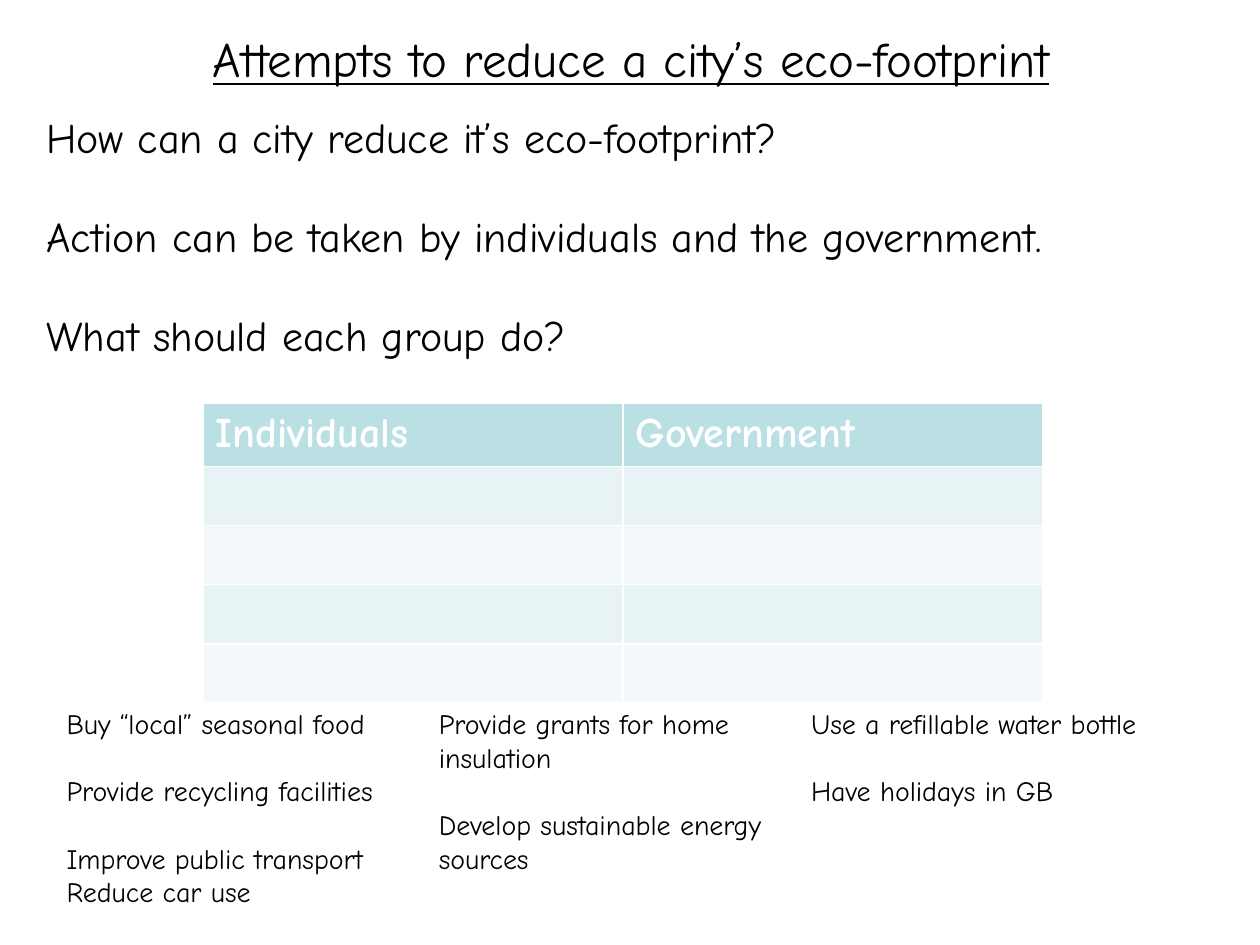
"""Build the eco-footprint lesson slide with its sorting table and word bank."""
import pptx
import pptx.util
import pptx.dml.color
import pptx.enum.text

FONT = "Comic Neue"
BLACK, WHITE = "000000", "FFFFFF"
TITLE = "Attempts to reduce a city’s eco-footprint"
PROMPTS = [
    "How can a city reduce it’s eco-footprint?",
    "Action can be taken by individuals and the government.",
    "What should each group do?",
]
HEADINGS = ["Individuals", "Government"]
ROW_FILLS = ["BBE0E3", "E7F3F4", "F3F9FA", "E7F3F4", "F3F9FA"]
ACTIONS = [
    ("Buy “local” seasonal food", True),
    ("Provide recycling facilities", True),
    ("Improve public transport", False),
    ("Reduce car use", False),
    ("Provide grants for home insulation", True),
    ("Develop sustainable energy sources", True),
    ("Use a refillable water bottle", True),
    ("Have holidays in GB", False),
]
ROW_HEIGHT = 0.47
ACTION_GAP = 19.2


def inches(*values):
    """Convert numbers to inch lengths."""
    return [pptx.util.Inches(value) for value in values]


def style(para, size, color=BLACK, bold=False, underline=False):
    """Format every run of a paragraph."""
    for span in para.runs:
        span.font.name = FONT
        span.font.size = pptx.util.Pt(size)
        span.font.bold = bold
        span.font.underline = underline
        span.font.color.rgb = pptx.dml.color.RGBColor.from_string(color)


def add_text(page, place, lines, size):
    """Add a wrapped text box with one paragraph for each line."""
    frame = page.shapes.add_textbox(*inches(*place)).text_frame
    frame.word_wrap = True
    frame.text = "\n".join(lines)
    for para in frame.paragraphs:
        style(para, size)
    return frame


def add_title(page):
    """Place and format the title."""
    title = page.shapes.title
    title.left, title.top, title.width, title.height = inches(0.51, 0.31, 9, 0.3)
    frame = title.text_frame
    frame.text = TITLE
    frame.auto_size = pptx.enum.text.MSO_AUTO_SIZE.NONE
    frame.vertical_anchor = pptx.enum.text.MSO_ANCHOR.MIDDLE
    frame.paragraphs[0].alignment = pptx.enum.text.PP_ALIGN.CENTER
    style(frame.paragraphs[0], 28, underline=True)


def add_prompts(page):
    """Add the three widely spaced prompts."""
    frame = add_text(page, (0.27, 0.91, 9.45, 6.09), PROMPTS, 24)
    for index, para in enumerate(frame.paragraphs):
        para.line_spacing = 0.8
        para.space_before = pptx.util.Pt(33.6 if index else 4.8)


def add_sorting_table(page):
    """Add the table with headings and empty answer rows."""
    rows, columns = len(ROW_FILLS), len(HEADINGS)
    place = inches(1.61, 3.2, 6.67, ROW_HEIGHT * rows)
    table = page.shapes.add_table(rows, columns, *place).table
    for row, fill in zip(table.rows, ROW_FILLS):
        for cell in row.cells:
            cell.fill.solid()
            cell.fill.fore_color.rgb = pptx.dml.color.RGBColor.from_string(fill)
    for cell, heading in zip(table.rows[0].cells, HEADINGS):
        cell.text_frame.text = heading
        style(cell.text_frame.paragraphs[0], 24, WHITE, bold=True)


def add_actions(page):
    """Add the word bank in three columns."""
    lines = [text for text, _ in ACTIONS]
    frame = add_text(page, (0.43, 5.56, 9.06, 1.72), lines, 16)
    frame._txBody.bodyPr.set("numCol", "3")
    for para, (_, gap) in zip(frame.paragraphs, ACTIONS):
        para.space_after = pptx.util.Pt(ACTION_GAP if gap else 0)


def main():
    """Build and save the deck."""
    deck = pptx.Presentation()
    deck.slide_width, deck.slide_height = inches(10, 7.5)
    page = deck.slides.add_slide(deck.slide_layouts.get_by_name("Title Only"))
    add_title(page)
    add_prompts(page)
    add_sorting_table(page)
    add_actions(page)
    deck.save("out.pptx")


if __name__ == "__main__":
    main()
